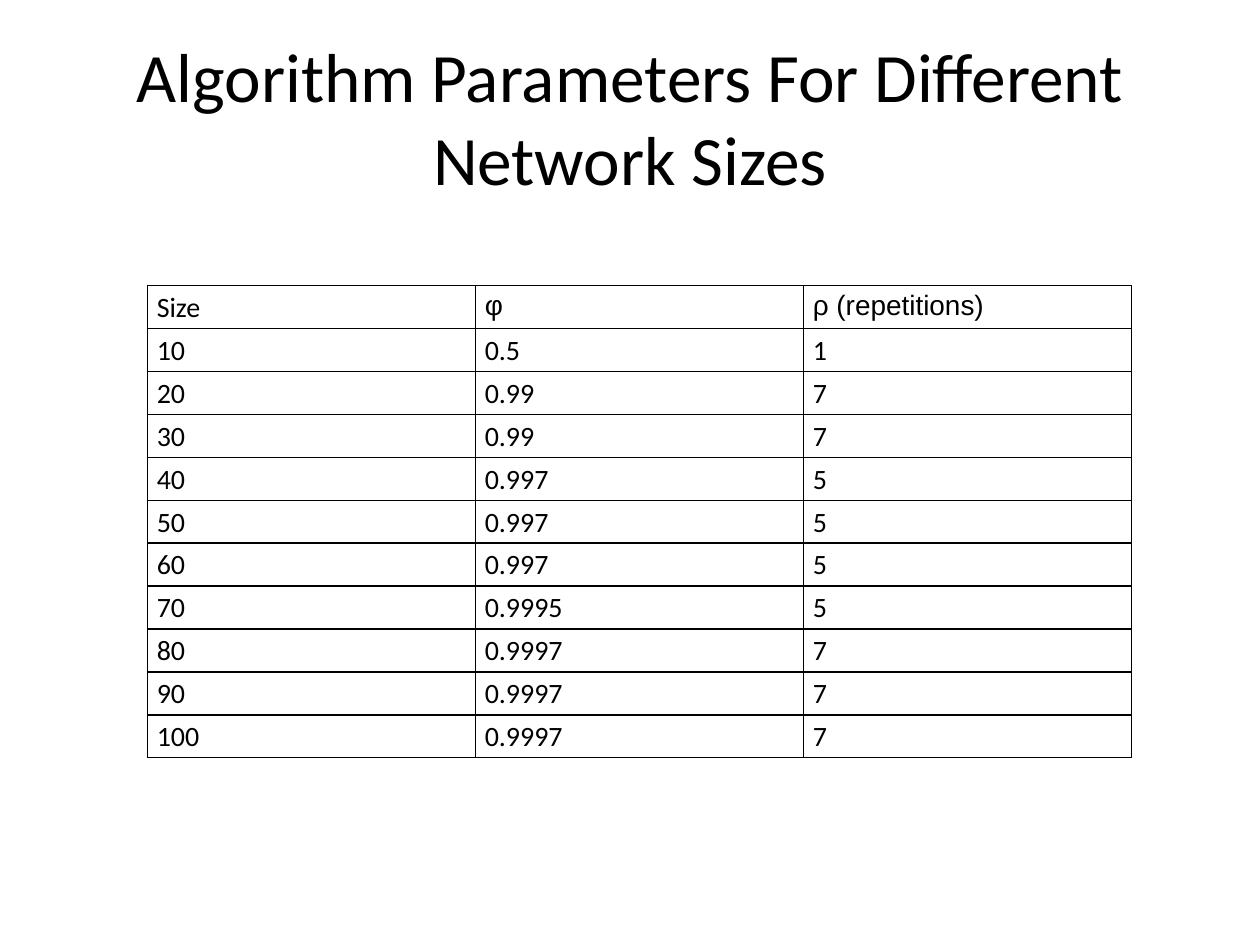
from lxml.etree import SubElement
from pptx import Presentation
from pptx.dml.color import RGBColor
from pptx.enum.text import MSO_ANCHOR, MSO_AUTO_SIZE, PP_ALIGN
from pptx.oxml.ns import qn
from pptx.util import Cm, Pt

BLACK = RGBColor(0x00, 0x00, 0x00)
WHITE = RGBColor(0xFF, 0xFF, 0xFF)

TITLE = "Algorithm Parameters For Different Network Sizes"
HEADINGS = ("Size", "φ", "ρ (repetitions)")
PARAMETERS = [
    (10, "0.5", 1),
    (20, "0.99", 7),
    (30, "0.99", 7),
    (40, "0.997", 5),
    (50, "0.997", 5),
    (60, "0.997", 5),
    (70, "0.9995", 5),
    (80, "0.9997", 7),
    (90, "0.9997", 7),
    (100, "0.9997", 7),
]


def format_font(paragraph, size, name="Calibri"):
    for run in paragraph.runs:
        run.font.size = Pt(size)
        run.font.name = name
        run.font.bold = False
        run.font.color.rgb = BLACK


def place_title(slide):
    title = slide.shapes.title
    title.left, title.top = Cm(1.27), Cm(0.76)
    title.width, title.height = Cm(22.86), Cm(3.18)
    frame = title.text_frame
    frame.text = TITLE
    frame.word_wrap = True
    frame.auto_size = MSO_AUTO_SIZE.NONE
    frame.vertical_anchor = MSO_ANCHOR.MIDDLE
    heading = frame.paragraphs[0]
    heading.alignment = PP_ALIGN.CENTER
    format_font(heading, 39.6)


def draw_borders(cell):
    properties = cell._tc.get_or_add_tcPr()
    # Border lines must come before the fill in the cell properties
    for index, side in enumerate(("a:lnL", "a:lnR", "a:lnT", "a:lnB")):
        line = SubElement(properties, qn(side), w=str(Pt(1)))
        fill = SubElement(line, qn("a:solidFill"))
        SubElement(fill, qn("a:srgbClr"), val=str(BLACK))
        properties.insert(index, line)


def fill_cell(cell, value, font_name):
    cell.margin_left = cell.margin_right = Cm(0.19)
    cell.margin_top = cell.margin_bottom = 0
    cell.fill.solid()
    cell.fill.fore_color.rgb = WHITE
    draw_borders(cell)
    entry = cell.text_frame.paragraphs[0]
    entry.text = str(value)
    entry.line_spacing = 1.15
    format_font(entry, 16, font_name)


def add_parameter_table(slide):
    rows = [HEADINGS, *PARAMETERS]
    table = slide.shapes.add_table(
        len(rows), len(HEADINGS), Cm(2.97), Cm(5.76), Cm(19.84), Cm(9.52)
    ).table
    table.first_row = table.horz_banding = False
    for r, values in enumerate(rows):
        for c, value in enumerate(values):
            # The Greek headings are set in Arial
            is_greek_heading = r == 0 and c > 0
            fill_cell(table.cell(r, c), value, "Arial" if is_greek_heading else "Calibri")


def main():
    deck = Presentation()
    deck.slide_width, deck.slide_height = Cm(25.4), Cm(19.05)
    slide = deck.slides.add_slide(deck.slide_layouts[5])
    place_title(slide)
    add_parameter_table(slide)
    deck.save("out.pptx")


if __name__ == "__main__":
    main()
